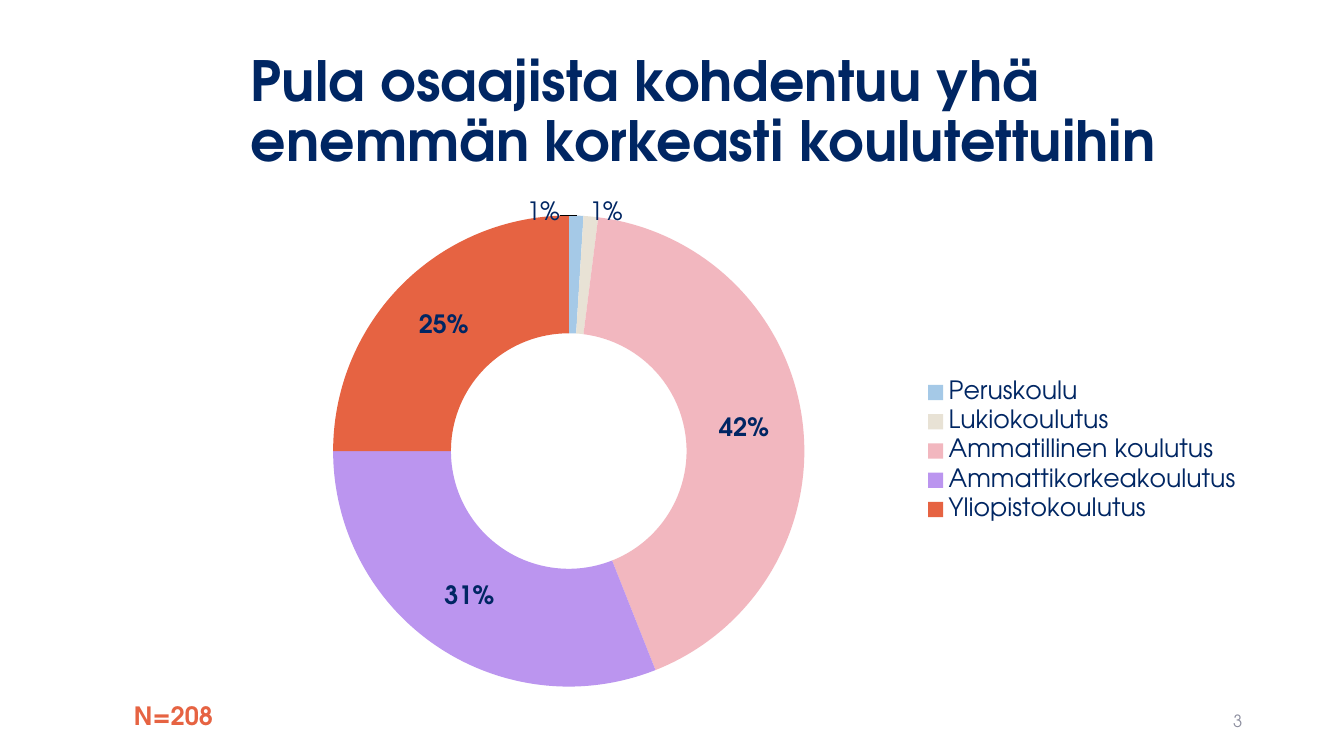
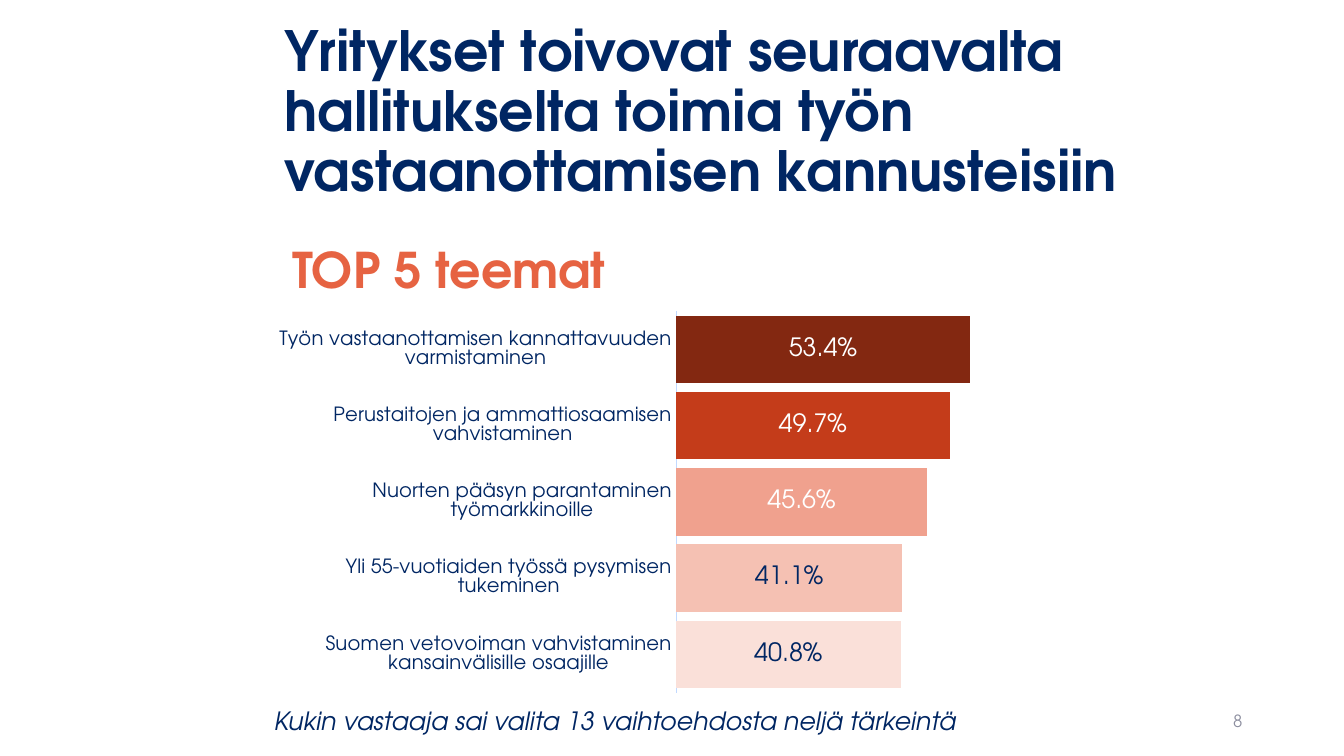
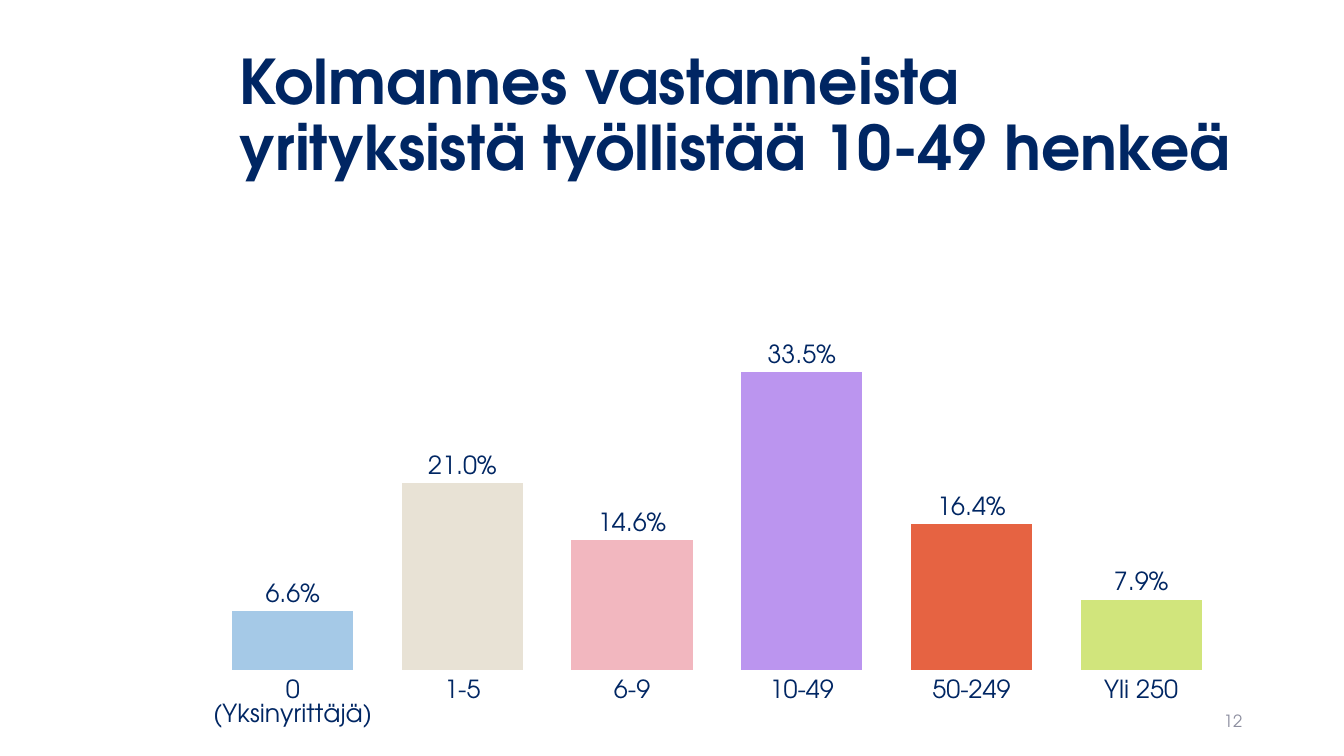
from dataclasses import dataclass

from pptx import Presentation
from pptx.chart.data import CategoryChartData
from pptx.dml.color import RGBColor
from pptx.enum.chart import (
    XL_CHART_TYPE as ChartType,
    XL_LABEL_POSITION as LabelPosition,
    XL_LEGEND_POSITION as LegendPosition,
    XL_TICK_MARK as TickMark,
)
from pptx.enum.text import MSO_ANCHOR as Anchor, PP_ALIGN as Align
from pptx.oxml import parse_xml
from pptx.oxml.ns import nsdecls, qn
from pptx.util import Inches, Pt


@dataclass(frozen=True)
class Theme:
    font: str = "TeX Gyre Adventor"
    navy: str = "002663"
    orange: str = "E66342"
    grey: str = "8C8E9F"
    white: str = "FFFFFF"
    axis: str = "C1D9FF"
    categories: tuple = ("A5C9E7", "E8E2D5", "F2B7BF", "BB95EF", "E66342", "D1E57C")
    ranking: tuple = ("FAE0D9", "F5C1B3", "F0A18E", "C43C1A", "832811")
    title_size: float = 39.6
    large_title_size: float = 44
    subtitle_size: float = 35.1
    body_size: float = 18
    axis_size: float = 14
    number_size: float = 12


def assign(target, values):
    for name, value in values.items():
        setattr(target, name, value)


def set_layout(parent, index, **values):
    old = parent.find(qn("c:layout"))
    if old is not None:
        parent.remove(old)
    fields = "".join(f'<c:{name} val="{value}"/>' for name, value in values.items())
    parent.insert(index, parse_xml(
        f'<c:layout {nsdecls("c")}><c:manualLayout>{fields}</c:manualLayout></c:layout>'
    ))


class SlideBuilder:
    def __init__(self, deck, theme):
        self.deck = deck
        self.theme = theme
        self.slide = None

    def page(self, number):
        self.slide = self.deck.slides.add_slide(self.deck.slide_layouts[6])
        self.text(str(number), (9.42, 6.95, 3, 0.4), self.theme.number_size,
                  self.theme.grey, Anchor.MIDDLE, {"alignment": Align.RIGHT})

    def style_font(self, font, size, color=None, **values):
        assign(font, {"name": self.theme.font, "size": Pt(size), **values})
        font.color.rgb = RGBColor.from_string(color or self.theme.navy)

    def text(self, words, place, size, color, anchor=Anchor.TOP, layout=None, **values):
        box = self.slide.shapes.add_textbox(*map(Inches, place))
        assign(box.text_frame, {"word_wrap": True, "vertical_anchor": anchor})
        para = box.text_frame.paragraphs[0]
        assign(para, layout or {})
        span = para.add_run()
        span.text = words
        self.style_font(span.font, size, color, **values)

    def heading(self, words, place, size=None, color=None):
        self.text(words, place, size or self.theme.title_size, color or self.theme.navy,
                  Anchor.MIDDLE, {"line_spacing": 0.9}, bold=True)

    def chart(self, kind, place, values, colors, number_format,
              label_color=None, position=None):
        data = CategoryChartData(number_format=number_format)
        data.categories = list(values)
        data.add_series("Series 1", list(values.values()))
        frame = self.slide.shapes.add_chart(kind, *map(Inches, place), data)
        chart = frame.chart
        assign(chart, {"has_title": False, "has_legend": False})
        self.style_font(chart.font, self.theme.body_size)
        series = chart.plots[0].series[0]
        for index, color in zip(range(len(values)), colors):
            shape = series.points[index].format
            shape.fill.solid()
            shape.fill.fore_color.rgb = RGBColor.from_string(color)
            shape.line.fill.background()
        labels = series.data_labels
        assign(labels, {"show_value": True, "show_percentage": False,
                        "number_format": number_format,
                        "number_format_is_linked": False})
        if position is not None:
            labels.position = position
        self.style_font(labels.font, self.theme.body_size, label_color)
        return chart

    def point_label(self, chart, index, position=None, **values):
        label = chart.plots[0].series[0].points[index].data_label
        self.style_font(label.font, self.theme.body_size, **values)
        if position is not None:
            label.position = position

    def move_label(self, chart, index, x, y):
        labels = chart.plots[0].series[0].data_labels
        self.point_label(chart, index)
        for label in labels._element.findall(qn("c:dLbl")):
            if label.find(qn("c:idx")).get("val") == str(index):
                set_layout(label, 1, x=x, y=y)

    def legend(self, chart):
        chart.has_legend = True
        assign(chart.legend, {"position": LegendPosition.RIGHT, "include_in_layout": False})
        self.style_font(chart.legend.font, self.theme.body_size)

    def axes(self, chart, size, gap, overlap, tick, line=None, limits=None):
        assign(chart.plots[0], {"gap_width": gap, "overlap": overlap, "vary_by_categories": False})
        assign(chart.value_axis, {"visible": False, "has_major_gridlines": False, **(limits or {})})
        category_axis = chart.category_axis
        assign(category_axis, {"major_tick_mark": tick, "has_major_gridlines": False})
        self.style_font(category_axis.tick_labels.font, size)
        if line:
            category_axis.format.line.color.rgb = RGBColor.from_string(line)
            category_axis.format.line.width = Pt(0.75)
        else:
            category_axis.format.line.fill.background()


def education_page(builder):
    theme = builder.theme
    builder.page(3)
    builder.heading("Pula osaajista kohdentuu yhä enemmän korkeasti koulutettuihin",
                    (2.39, 0.4, 10.02, 1.45))
    shares = {
        "Peruskoulu": 0.01,
        "Lukiokoulutus": 0.01,
        "Ammatillinen koulutus": 0.42,
        "Ammattikorkeakoulutus": 0.31,
        "Yliopistokoulutus": 0.25,
    }
    chart = builder.chart(ChartType.DOUGHNUT, (2.16, 2, 10.26, 4.95), shares,
                          theme.categories, "0%")
    builder.legend(chart)
    for index, x in enumerate((-0.03, 0.02)):
        builder.move_label(chart, index, x, -0.13)
    for index in range(2, len(shares)):
        builder.point_label(chart, index, bold=True)
    builder.text("N=208", (1.23, 6.9, 4.02, 0.4), theme.body_size, theme.orange, bold=True)


def themes_page(builder):
    theme = builder.theme
    builder.page(8)
    builder.heading("Yritykset toivovat seuraavalta hallitukselta toimia työn "
                    "vastaanottamisen kannusteisiin", (2.72, 0.4, 9.69, 1.45))
    shares = {
        "Suomen vetovoiman vahvistaminen kansainvälisille osaajille": 0.408,
        "Yli 55-vuotiaiden työssä pysymisen tukeminen": 0.411,
        "Nuorten pääsyn parantaminen työmarkkinoille": 0.456,
        "Perustaitojen ja ammattiosaamisen vahvistaminen": 0.497,
        "Työn vastaanottamisen kannattavuuden varmistaminen": 0.534,
    }
    chart = builder.chart(ChartType.BAR_CLUSTERED, (2.62, 3.01, 7.51, 3.94), shares,
                          theme.ranking, "0.0%", theme.white, LabelPosition.CENTER)
    builder.axes(chart, theme.axis_size, 13, -73, TickMark.NONE, theme.axis)
    for index in range(2):
        builder.point_label(chart, index, LabelPosition.CENTER)
    builder.heading("TOP 5 teemat", (2.8, 2.24, 4.12, 0.93), theme.subtitle_size, theme.orange)
    builder.text("Kukin vastaaja sai valita 13 vaihtoehdosta neljä tärkeintä",
                 (2.62, 6.95, 7.12, 0.4), theme.body_size, theme.navy, italic=True)


def company_size_page(builder):
    theme = builder.theme
    builder.page(12)
    builder.heading("Kolmannes vastanneista yrityksistä työllistää 10-49 henkeä",
                    (2.28, 0.44, 10.26, 1.45), theme.large_title_size)
    shares = {
        "0 (Yksinyrittäjä)": 0.066,
        "1-5": 0.21,
        "6-9": 0.146,
        "10-49": 0.335,
        "50-249": 0.164,
        "Yli 250": 0.079,
    }
    chart = builder.chart(ChartType.COLUMN_CLUSTERED, (1.75, 2.09, 10.41, 5.13), shares,
                          theme.categories, "0.0%", position=LabelPosition.OUTSIDE_END)
    builder.axes(chart, theme.body_size, 40, -2, TickMark.OUTSIDE,
                 limits={"minimum_scale": 0, "maximum_scale": 0.5})
    set_layout(chart._chartSpace.chart.plotArea, 0, layoutTarget="inner",
               xMode="edge", yMode="edge", x=0.03, y=0.03, w=0.97, h=0.87)


def main():
    deck = Presentation()
    assign(deck, {"slide_width": Inches(13.33), "slide_height": Inches(7.5)})
    builder = SlideBuilder(deck, Theme())
    for build in (education_page, themes_page, company_size_page):
        build(builder)
    deck.save("out.pptx")


if __name__ == "__main__":
    main()
